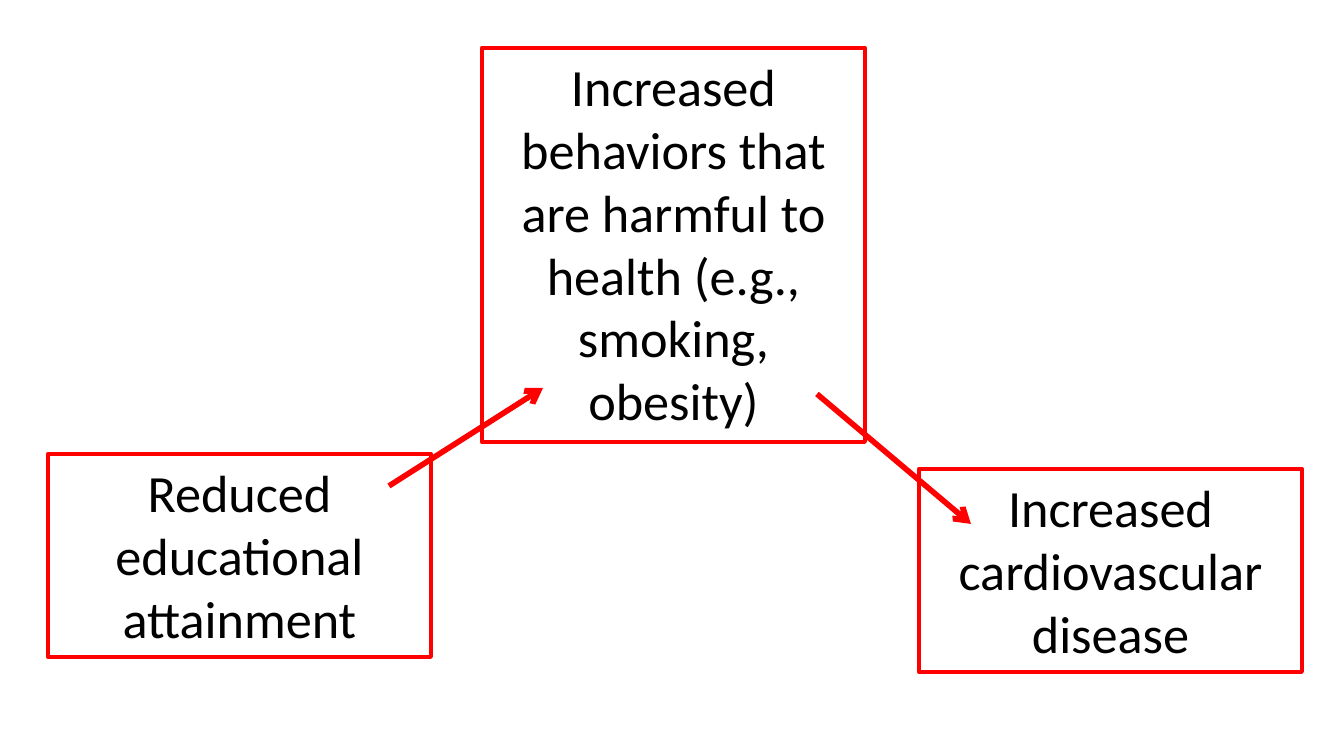
import pptx
import pptx.dml.color
import pptx.enum.shapes
import pptx.enum.text
import pptx.oxml
import pptx.oxml.ns
import pptx.util

RED = pptx.dml.color.RGBColor(0xFF, 0x00, 0x00)
BLACK = pptx.dml.color.RGBColor(0x00, 0x00, 0x00)
EMU_PER_PX = 914400 / 134.4
SLIDE_WIDTH, SLIDE_HEIGHT = 1344, 756
BOX_WIDTH = 383


def px(length):
    return pptx.util.Emu(round(length * EMU_PER_PX))


class Diagram:
    """Holds the style and the slide being drawn on."""

    font_format = {"name": "Calibri", "size": pptx.util.Pt(28)}
    frame_format = {
        "word_wrap": True,
        "auto_size": pptx.enum.text.MSO_AUTO_SIZE.SHAPE_TO_FIT_TEXT,
    }
    border_width = pptx.util.Pt(2.25)
    arrow_width = pptx.util.Pt(3)

    def __init__(self, slide):
        self.slide = slide

    def apply(self, target, formats):
        for attribute, value in formats.items():
            setattr(target, attribute, value)

    def outline(self, line, width):
        line.color.rgb = RED
        line.width = width

    def factor(self, text, left, top, height):
        """Add a bordered text box for one step of the causal chain."""
        box = self.slide.shapes.add_textbox(
            px(left), px(top), px(BOX_WIDTH), px(height)
        )
        self.outline(box.line, self.border_width)
        self.apply(box.text_frame, self.frame_format)
        paragraph = box.text_frame.paragraphs[0]
        paragraph.alignment = pptx.enum.text.PP_ALIGN.CENTER
        run = paragraph.add_run()
        run.text = text
        self.apply(run.font, self.font_format)
        run.font.color.rgb = BLACK

    def arrow(self, start, end):
        connector = self.slide.shapes.add_connector(
            pptx.enum.shapes.MSO_CONNECTOR.STRAIGHT,
            *(px(length) for length in (*start, *end)),
        )
        self.outline(connector.line, self.arrow_width)
        head = pptx.oxml.parse_xml(
            f'<a:tailEnd {pptx.oxml.ns.nsdecls("a")} type="arrow"/>'
        )
        connector.line._get_or_add_ln().append(head)
        no_shadow = pptx.oxml.parse_xml(
            f'<a:effectLst {pptx.oxml.ns.nsdecls("a")}/>'
        )
        connector._element.spPr.append(no_shadow)


def main():
    presentation = pptx.Presentation()
    presentation.slide_width = px(SLIDE_WIDTH)
    presentation.slide_height = px(SLIDE_HEIGHT)
    blank_layout = presentation.slide_layouts[6]
    diagram = Diagram(presentation.slides.add_slide(blank_layout))

    factors = (
        ("Increased cardiovascular disease", 919, 469, 203),
        ("Reduced educational attainment", 48, 454, 203),
        (
            "Increased behaviors that are harmful to health "
            "(e.g., smoking, obesity)",
            482, 48, 394,
        ),
    )
    for factor in factors:
        diagram.factor(*factor)

    diagram.arrow((389, 486), (543, 388))
    diagram.arrow((817, 394), (971, 524))

    presentation.save("out.pptx")


if __name__ == "__main__":
    main()
